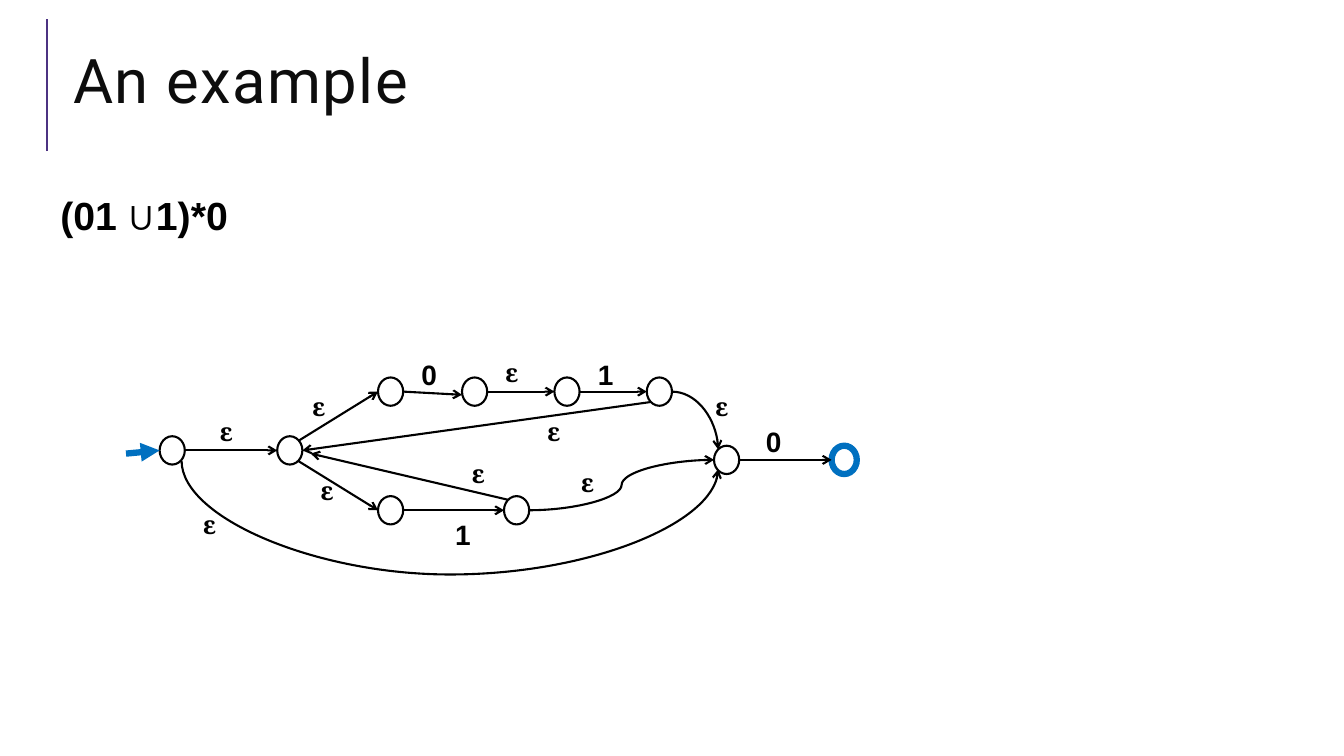
from pptx import Presentation
from pptx.dml.color import RGBColor
from pptx.enum.shapes import MSO_CONNECTOR, MSO_SHAPE
from pptx.enum.text import MSO_ANCHOR, MSO_AUTO_SIZE, PP_ALIGN
from pptx.oxml.ns import qn
from pptx.util import Pt
from lxml.etree import SubElement

PX = 9525  # 96 px to the inch
BLACK, BLUE = "000000", "0070C0"
WIDE, TALL = 24, 27  # size of a state


def px(*nums):
    return [round(n * PX) for n in nums]


def color(code):
    return RGBColor.from_string(code)


def write(frame, text, font="Arial", size=20, ink=BLACK, bold=True):
    para = frame.paragraphs[0]
    para.alignment = PP_ALIGN.LEFT
    run = para.add_run()
    run.text = text
    run.font.name = font
    run.font.size = Pt(size)
    run.font.bold = bold
    run.font.color.rgb = color(ink)
    return para, run


def label(slide, box, text, **form):
    frame = slide.shapes.add_textbox(*px(*box)).text_frame
    frame.word_wrap = False
    frame.auto_size = MSO_AUTO_SIZE.SHAPE_TO_FIT_TEXT
    write(frame, text, **form)


def link(slide, ends, kind=MSO_CONNECTOR.STRAIGHT, ink=BLACK, width=1.5, head="arrow"):
    line = slide.shapes.add_connector(kind, *px(*ends))
    line.line.color.rgb = color(ink)
    line.line.width = Pt(width)
    props = line._element.spPr
    if head:
        SubElement(props.find(qn("a:ln")), qn("a:tailEnd"), type=head)
    SubElement(props, qn("a:effectLst"))
    return props


def loop(slide, x1, y1, x2, y2, depth):
    """Arc that hangs below both ends: a curve turned by 270 degrees."""
    x, y = (x1 + x2) / 2, (y1 + y2) / 2
    w, h = y2 - y1, x2 - x1
    ends = (x + w / 2, y - h / 2, x - w / 2, y + h / 2)
    props = link(slide, ends, kind=MSO_CONNECTOR.CURVE)
    props.find(qn("a:xfrm")).set("rot", str(270 * 60000))
    geom = props.find(qn("a:prstGeom"))
    guides = geom.find(qn("a:avLst"))
    if guides is None:
        guides = SubElement(geom, qn("a:avLst"))
    SubElement(guides, qn("a:gd"), name="adj1", fmla=f"val {round(depth / w * 100000)}")


def state(slide, x, y, ink=BLACK, width=1.5):
    ring = slide.shapes.add_shape(
        MSO_SHAPE.OVAL, *px(x - WIDE / 2, y - TALL / 2, WIDE, TALL))
    ring.shadow.inherit = False
    ring.fill.background()
    ring.line.color.rgb = color(ink)
    ring.line.width = Pt(width)


def header(slide, left, top, width, height):
    link(slide, (left, top + 126, left, top), ink="4C3282", head=None)
    title = slide.shapes.title
    title.left, title.top, title.width, title.height = px(
        left + 15, top + 10, width - 15, height - 19)
    frame = title.text_frame
    frame.auto_size = MSO_AUTO_SIZE.NONE
    frame.vertical_anchor = MSO_ANCHOR.MIDDLE
    para, run = write(frame, "An example", font="Roboto", size=44, ink="0D0D0D", bold=False)
    para.line_spacing = 0.8
    run.font._element.set("spc", "100")


def graph(slide, left, top):
    def at(*nums):
        return [n + (top if i % 2 else left) for i, n in enumerate(nums)]

    # States
    start, fork, join, final = (44, 93), (156, 93), (572, 102), (684, 102)
    upper = [(x, 37) for x in (252, 332, 420, 508)]
    lower = [(x, 150) for x in (252, 372)]
    for spot in [start, fork, join, *upper, *lower]:
        state(slide, *at(*spot))
    state(slide, *at(*final), ink=BLUE, width=4.5)

    # Level arrows from rim to rim
    pairs = [(start, fork), (join, final), tuple(lower), *zip(upper[1:], upper[2:])]
    for (x1, y1), (x2, y2) in pairs:
        link(slide, at(x1 + WIDE / 2, y1, x2 - WIDE / 2, y2))

    # Slanted arrows
    link(slide, at(0, 96, 32, 93), ink=BLUE, width=4.5, head="triangle")
    for ends in [(164, 84, 240, 37), (164, 103, 240, 150), (264, 37, 320, 40),
                 (499, 47, 168, 93), (364, 140, 176, 96)]:
        link(slide, at(*ends))

    # Curved arrows
    link(slide, at(384, 150, 560, 102), kind=MSO_CONNECTOR.CURVE)
    bend = link(slide, at(520, 37, 564, 92), kind=MSO_CONNECTOR.CURVE)
    bend.find(qn("a:prstGeom")).set("prst", "curvedConnector2")
    loop(slide, *at(53, 103, 564, 111), depth=108)

    # Arrow labels
    for x, y in [(168, 32), (80, 56), (176, 112), (352, 0), (320, 96),
                 (392, 56), (64, 144), (424, 104), (552, 32)]:
        label(slide, (*at(x, y), 31, 38), "ɛ", font="Cambria", size=18)
    for text, x, y in [("0", 272, 0), ("0", 600, 64), ("1", 304, 152), ("1", 440, 0)]:
        label(slide, (*at(x, y), 35, 42), text)


def main():
    deck = Presentation()
    deck.slide_width, deck.slide_height = px(1280, 720)
    slide = deck.slides.add_slide(deck.slide_layouts[5])
    header(slide, 45, 18, 1189, 126)
    label(slide, (48, 177, 182, 55), "(01 ∪1)*0", size=28)
    graph(slide, 120, 336)
    deck.save("out.pptx")


if __name__ == "__main__":
    main()
